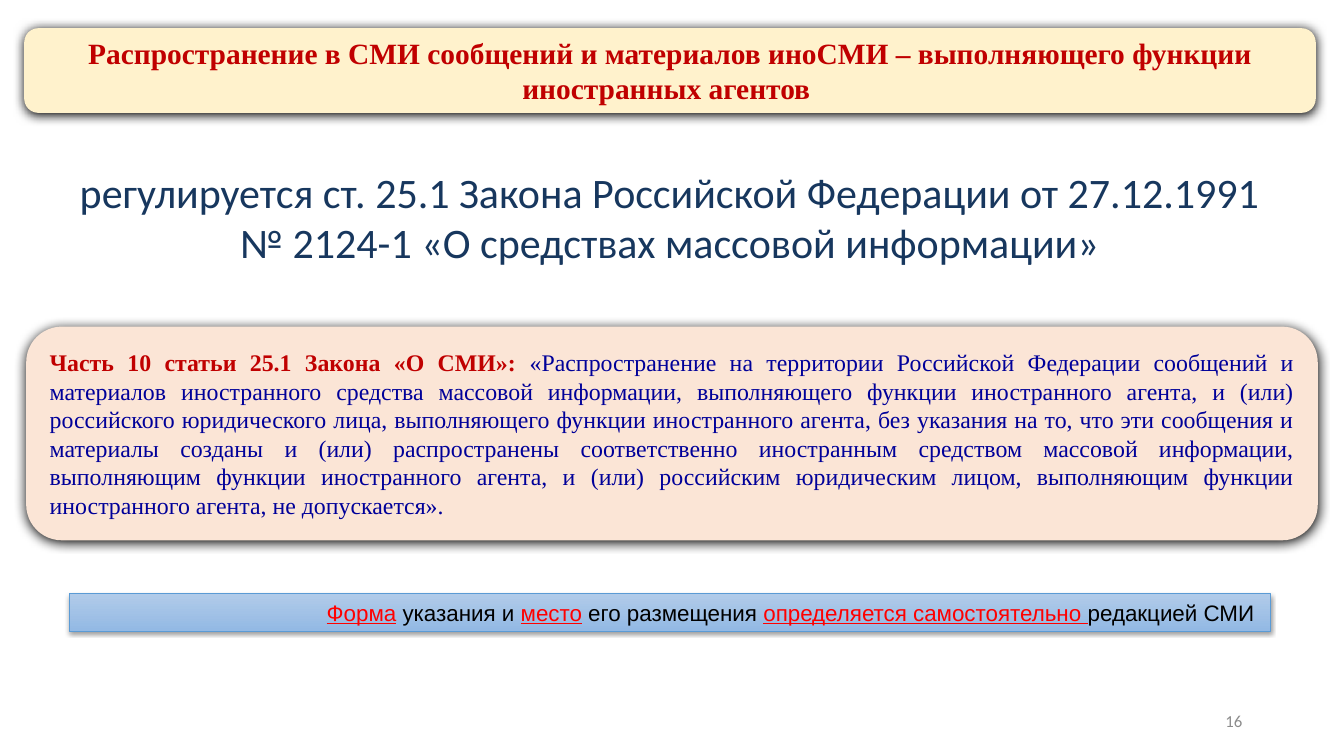
import pptx
import pptx.util
import lxml.etree
from pptx.dml.color import RGBColor
from pptx.enum.shapes import MSO_SHAPE
from pptx.enum.text import MSO_ANCHOR, MSO_AUTO_SIZE, PP_ALIGN
from pptx.oxml.ns import qn
from pptx.util import Inches

COLORS = {
    "cream": "FFF2CC", "peach": "FBE5D6", "dark_red": "C00000",
    "red": "FF0000", "navy": "17375E", "blue": "000099",
    "black": "000000", "gray": "8C8C8C", "border": "5B9BD5",
    "bar_top": "B1CBE9", "bar_bottom": "93B9E4",
}


def rgb(name):
    return RGBColor.from_string(COLORS[name])


def add_shadow(effects, blur, dist, alpha):
    """Put a black downward shadow into an effect list."""
    shadow = lxml.etree.SubElement(
        effects, qn("a:outerShdw"), blurRad=str(pptx.util.Pt(blur)),
        dist=str(pptx.util.Pt(dist)), dir="5400000", algn="ctr", rotWithShape="0")
    color = lxml.etree.SubElement(shadow, qn("a:srgbClr"), val=COLORS["black"])
    lxml.etree.SubElement(color, qn("a:alpha"), val=str(alpha * 1000))


def add_panel(s, kind, box, shadow):
    sp = s.shapes.add_shape(kind, *map(Inches, box))
    sp.shadow.inherit = False
    add_shadow(sp.element.spPr.find(qn("a:effectLst")), *shadow)
    return sp


def add_plate(s, box, fill):
    """Borderless rounded panel with a strong shadow."""
    sp = add_panel(s, MSO_SHAPE.ROUNDED_RECTANGLE, box, (8.5, 1, 100))
    sp.fill.solid()
    sp.fill.fore_color.rgb = rgb(fill)
    sp.line.fill.background()
    return sp


def add_box(s, box):
    return s.shapes.add_textbox(*map(Inches, box))


def write(sp, parts, font, size, align, anchor, margins):
    """Fill a shape with one paragraph of (text, colour, styles) parts."""
    tf = sp.text_frame
    tf.word_wrap = True
    tf.auto_size = MSO_AUTO_SIZE.NONE
    tf.vertical_anchor = anchor
    tf.margin_left = tf.margin_right = Inches(margins[0])
    tf.margin_top = tf.margin_bottom = Inches(margins[1])
    p = tf.paragraphs[0]
    p.alignment = align
    for text, color, styles in parts:
        r = p.add_run()
        r.text = text
        r.font.name = font
        r.font.size = pptx.util.Pt(size)
        r.font.bold = "b" in styles
        r.font.underline = "u" in styles
        r.font.color.rgb = rgb(color)
    return p


def main():
    prs = pptx.Presentation()
    prs.slide_width, prs.slide_height = Inches(13.33), Inches(7.5)
    s = prs.slides.add_slide(prs.slide_layouts[5])

    # Title on its plate
    title_box = (0.24, 0.28, 12.81, 0.84)
    plate = add_plate(s, title_box, "cream")
    title = s.shapes.title
    title.element.addprevious(plate.element)
    title.left, title.top, title.width, title.height = map(Inches, title_box)
    write(title, [("Распространение в СМИ сообщений и материалов иноСМИ – "
                   "выполняющего функции иностранных агентов ", "dark_red", "b")],
          "Times New Roman", 21, PP_ALIGN.CENTER, MSO_ANCHOR.MIDDLE, (0.17, 0.07))

    # Governing law, with shadowed letters
    p = write(add_box(s, (0.4, 1.56, 12.49, 1.2)),
              [("регулируется ст. 25.1 Закона Российской Федерации от 27.12.1991 "
                "№ 2124-1 «О средствах массовой информации»", "navy", "")],
              "Calibri", 30, PP_ALIGN.CENTER, MSO_ANCHOR.TOP, (0.19, 0.09))
    effects = lxml.etree.Element(qn("a:effectLst"))
    add_shadow(effects, 3, 2, 40)
    p.runs[0].font.fill  # the colour fill precedes the effects
    p.runs[0]._r.rPr.find(qn("a:solidFill")).addnext(effects)

    # Quoted provision
    write(add_plate(s, (0.26, 3.24, 12.81, 2.12), "peach"),
          [("Часть 10 статьи 25.1 Закона «О СМИ»: ", "dark_red", "b"),
           ("«Распространение на территории Российской Федерации сообщений и "
            "материалов иностранного средства массовой информации, выполняющего "
            "функции иностранного агента, и (или) российского юридического лица, "
            "выполняющего функции иностранного агента, без указания на то, что эти "
            "сообщения и материалы созданы и (или) распространены соответственно "
            "иностранным средством массовой информации, выполняющим функции "
            "иностранного агента, и (или) российским юридическим лицом, выполняющим "
            "функции иностранного агента, не допускается».", "blue", "")],
          "Times New Roman", 17, PP_ALIGN.JUSTIFY, MSO_ANCHOR.MIDDLE, (0.13, 0.07))

    # Bar with the closing remark
    bar = add_panel(s, MSO_SHAPE.RECTANGLE, (0.69, 5.89, 11.91, 0.37), (3.1, 1.6, 38))
    bar.fill.gradient()
    bar.fill.gradient_angle = 270
    for stop, color in zip(bar.fill.gradient_stops, ("bar_top", "bar_bottom")):
        stop.color.rgb = rgb(color)
    bar.line.color.rgb = rgb("border")
    bar.line.width = pptx.util.Pt(0.5)
    write(bar, [("Форма", "red", "u"), (" указания и ", "black", ""),
                ("место", "red", "u"), (" его размещения ", "black", ""),
                ("определяется самостоятельно ", "red", "u"),
                ("редакцией СМИ ", "black", "")],
          "Arial", 16, PP_ALIGN.RIGHT, MSO_ANCHOR.TOP, (0.1, 0.05))

    # Slide number
    write(add_box(s, (9.42, 6.95, 3, 0.4)), [("16", "gray", "")],
          "Calibri", 12, PP_ALIGN.RIGHT, MSO_ANCHOR.MIDDLE, (0.1, 0.05))

    prs.save("out.pptx")


if __name__ == "__main__":
    main()
